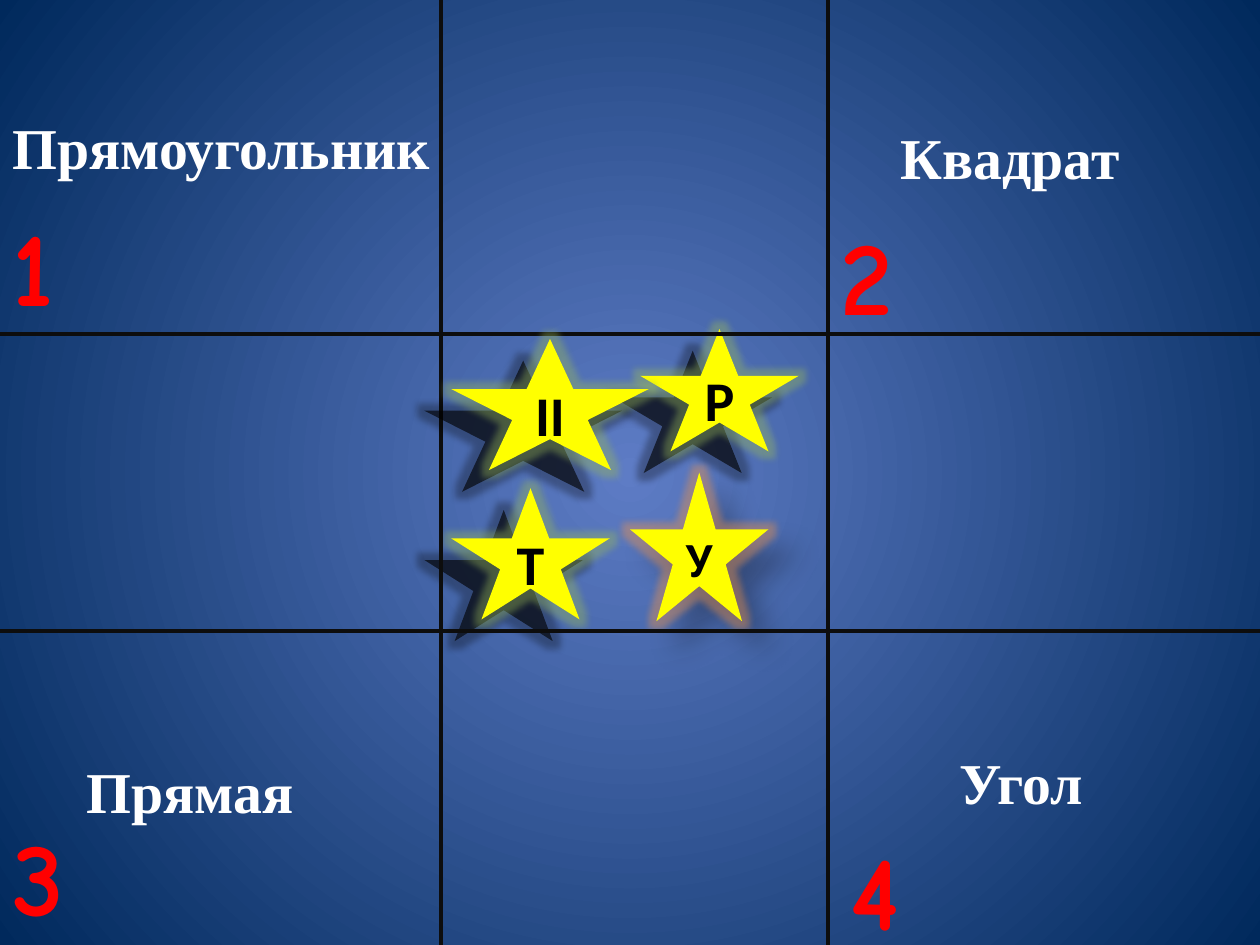
"""Build a grid slide with four lettered stars and four numbered shape names."""
from lxml.etree import SubElement
from pptx import Presentation
from pptx.dml.color import RGBColor
from pptx.enum.shapes import MSO_CONNECTOR, MSO_SHAPE
from pptx.enum.text import MSO_ANCHOR, PP_ALIGN
from pptx.oxml.ns import qn
from pptx.util import Pt

WIDE, HIGH = 720, 540
BLACK = RGBColor(0, 0, 0)
WHITE = RGBColor(255, 255, 255)
RED = RGBColor(255, 0, 0)
GOLD = RGBColor(255, 255, 0)
INK = RGBColor(0x0D, 0x0D, 0x0D)
GREEN = RGBColor(0x9B, 0xBB, 0x59)
RUST = RGBColor(0xF7, 0x96, 0x46)
BACK = [RGBColor(0x5E, 0x7C, 0xC5), RGBColor(0, 0x29, 0x5C)]

LEFT = {"color": GREEN, "alpha": 72, "blur": 0, "dist": 19.7, "angle": 141}
RIGHT = {"color": RUST, "alpha": 30, "blur": 15, "dist": 18, "angle": 45}
STARS = [
    ("Т", 32, (257.8, 279, 90.7, 75), LEFT),
    ("Р", 32, (365.8, 188, 90.7, 70), LEFT),
    ("У", 28, (360, 270, 79.2, 85), RIGHT),
    ("II", 32, (257.8, 193.7, 113, 75), LEFT),
]
COLS = [252, 473]
ROWS = [190.8, 360.7]
NAMES = [
    ("Прямоугольник", (0, 60.5, 297.4), (0, 111.6)),
    ("Квадрат", (507.6, 66.2, 193), (473, 116.6)),
    ("Прямая", (42.5, 428.4, 167), (0, 460)),
    ("Угол", (541.4, 423.4, 136), (478.8, 468)),
]
NAME = {"name": "Times New Roman", "size": Pt(33), "bold": True}
DIGIT = {"name": "Comic Neue", "size": Pt(60), "bold": True}
MARK = {"name": "Calibri", "bold": True}


def write(frame, text, style, color):
    para = frame.paragraphs[0]
    run = para.add_run()
    run.text = text
    for key, value in style.items():
        setattr(run.font, key, value)
    run.font.color.rgb = color
    return para


def tint(node, color, alpha):
    part = SubElement(node, qn("a:srgbClr"), val=str(color))
    SubElement(part, qn("a:alpha"), val=str(alpha * 1000))


def glow(shape, look):
    shape.shadow.inherit = False
    group = shape._element.spPr.find(qn("a:effectLst"))
    halo = SubElement(group, qn("a:glow"), rad=str(Pt(8)))
    tint(halo, look["color"], 40)
    shade = SubElement(
        group, qn("a:outerShdw"), blurRad=str(Pt(look["blur"])),
        dist=str(Pt(look["dist"])), dir=str(look["angle"] * 60000),
        algn="ctr", rotWithShape="0")
    tint(shade, BLACK, look["alpha"])


def star(slide, text, size, box, look):
    shape = slide.shapes.add_shape(MSO_SHAPE.STAR_5_POINT, *map(Pt, box))
    shape.fill.solid()
    shape.fill.fore_color.rgb = GOLD
    shape.line.fill.background()
    glow(shape, look)
    shape.text_frame.vertical_anchor = MSO_ANCHOR.MIDDLE
    para = write(shape.text_frame, text, {**MARK, "size": Pt(size)}, BLACK)
    para.alignment = PP_ALIGN.CENTER


def rule(slide, *ends):
    line = slide.shapes.add_connector(MSO_CONNECTOR.STRAIGHT, *map(Pt, ends))
    line.line.color.rgb = INK
    line.line.width = Pt(2.25)
    SubElement(line._element.spPr, qn("a:effectLst"))


def label(slide, text, box, style, color):
    frame = slide.shapes.add_textbox(*map(Pt, box)).text_frame
    frame.word_wrap = True
    write(frame, text, style, color)


def paint(slide):
    fill = slide.background.fill
    fill.gradient()
    for stop, color, place in zip(fill.gradient_stops, BACK, (0, 1)):
        stop.color.rgb = color
        stop.position = place
    grad = next(slide._element.iter(qn("a:gradFill")))
    grad.remove(grad.find(qn("a:lin")))
    ring = SubElement(grad, qn("a:path"), path="circle")
    sides = dict.fromkeys("ltrb", "50000")
    SubElement(ring, qn("a:fillToRect"), **sides)


def main():
    deck = Presentation()
    deck.slide_width, deck.slide_height = Pt(WIDE), Pt(HIGH)
    slide = deck.slides.add_slide(deck.slide_layouts[6])
    paint(slide)
    for item in STARS[:3]:
        star(slide, *item)
    for x in COLS:
        rule(slide, x, 0, x, HIGH)
    for y in ROWS:
        rule(slide, 0, y, WIDE, y)
    star(slide, *STARS[3])
    for num, (text, box, spot) in enumerate(NAMES, 1):
        label(slide, text, (*box, 48.2), NAME, WHITE)
        label(slide, str(num), (*spot, 76.3, 80), DIGIT, RED)
    deck.save("out.pptx")


if __name__ == "__main__":
    main()
